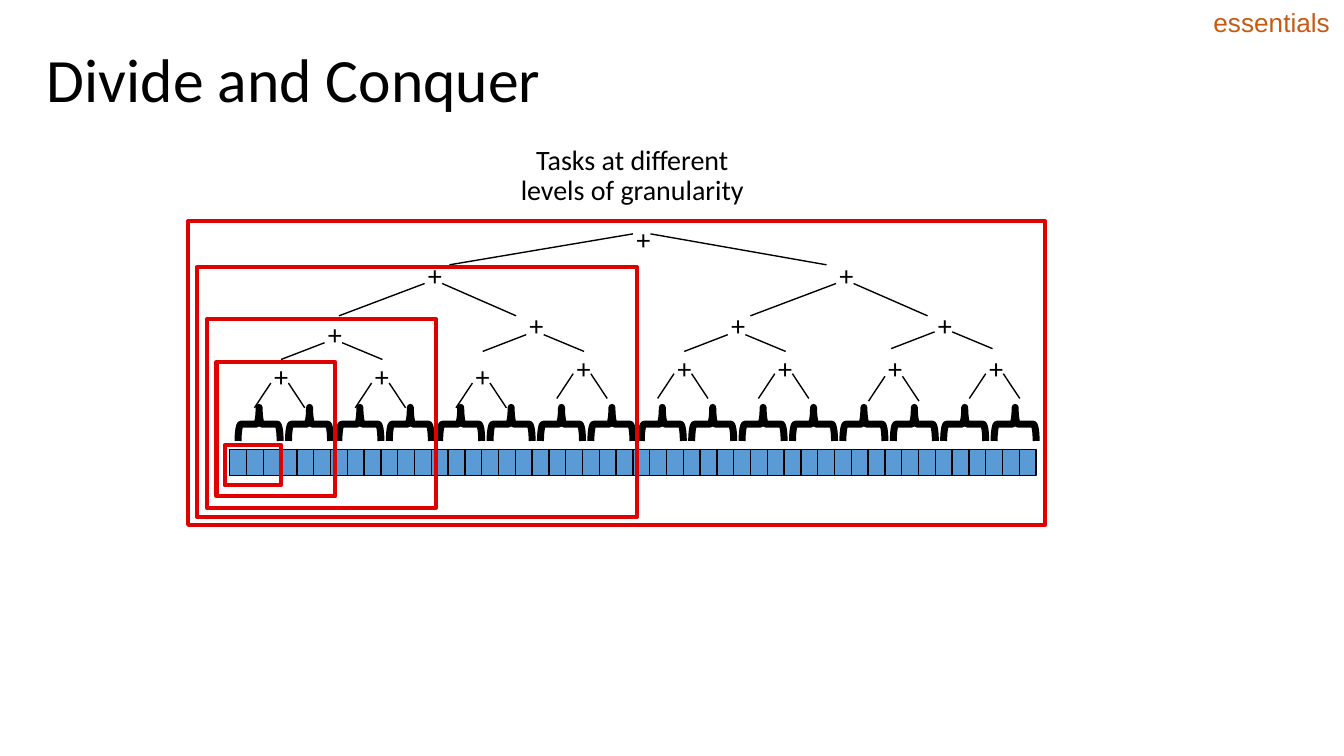
from lxml.etree import SubElement
from pptx import Presentation
from pptx.dml.color import RGBColor
from pptx.enum.shapes import MSO_CONNECTOR, MSO_SHAPE
from pptx.enum.text import MSO_ANCHOR, PP_ALIGN
from pptx.oxml.ns import qn
from pptx.util import Pt


def color(hex_code):
    return RGBColor.from_string(hex_code)


class Diagram:
    black = "000000"
    cell_fill = "5B9BD5"
    frame_red = "DF0000"
    accent = "C65A11"
    font = "Calibri"
    tip_gap = 4.7

    def __init__(self, slide):
        self.shapes = slide.shapes

    def outline(self, kind, box, line, weight, fill=None, rotation=0):
        shape = self.shapes.add_shape(kind, *map(Pt, box))
        shape.shadow.inherit = False
        shape.rotation = rotation
        if fill:
            shape.fill.solid()
            shape.fill.fore_color.rgb = color(fill)
        else:
            shape.fill.background()
        shape.line.color.rgb = color(line)
        shape.line.width = Pt(weight)

    def cell(self, x):
        self.outline(MSO_SHAPE.RECTANGLE, (x, 240.8, 9, 13.8), self.black, 0.75, self.cell_fill)

    def brace(self, x):
        self.outline(MSO_SHAPE.LEFT_BRACE, (x, 216, 18, 22.5), self.black, 3.75, rotation=90)

    def frame(self, box):
        self.outline(MSO_SHAPE.RECTANGLE, box, self.frame_red, 2.25)

    def line(self, start, end):
        connector = self.shapes.add_connector(MSO_CONNECTOR.STRAIGHT, *map(Pt, start + end))
        connector.line.color.rgb = color(self.black)
        connector.line.width = Pt(0.75)
        SubElement(connector._element.spPr, qn("a:effectLst"))

    def text(self, words, box, size, insets, font=None, ink=None, anchor=MSO_ANCHOR.TOP,
             align=PP_ALIGN.LEFT, spacing=None, before=0, wrap=True, rotation=0):
        label = self.shapes.add_textbox(*map(Pt, box))
        label.rotation = rotation
        frame = label.text_frame
        frame.word_wrap = wrap
        frame.vertical_anchor = anchor
        frame.margin_left = frame.margin_right = Pt(insets[0])
        frame.margin_top = frame.margin_bottom = Pt(insets[1])
        paragraph = frame.paragraphs[0]
        paragraph.text = words
        paragraph.alignment = align
        paragraph.line_spacing = spacing
        paragraph.space_before = Pt(before)
        paragraph.font.size = Pt(size)
        paragraph.font.name = font or self.font
        paragraph.font.color.rgb = color(ink or self.black)

    def node(self, x, top, fork, left, right, drop):
        self.line((x + right, fork + drop), (x + self.tip_gap, fork))
        self.line((x - left, fork + drop), (x - self.tip_gap, fork))
        self.text("+", (x - 9.5, top, 19, 24), 15, (5, 2.7), rotation=180)


LEVELS = [
    ((13.5, 13.5, 13.3), [
        (149.8, 191.5, 205.2), (203.8, 191.5, 205.2), (257.8, 191.5, 205.2),
        (311.8, 187.2, 200.2), (365.8, 187.2, 200.2), (419.8, 187.2, 200.2),
        (478.8, 187.2, 201.6), (532.8, 187.2, 200.2)]),
    ((28, 26.3, 9), [
        (178.6, 169.2, 183.6), (286.6, 164.2, 179.3),
        (394.6, 164.2, 179.3), (505.4, 164.2, 177.8)]),
    ((50.6, 44.3, 17.3), [(232.2, 137.5, 151.9), (452.6, 137.5, 151.9)]),
    ((103, 99, 16.6), [(343.8, 118.1, 125.3)]),
]

TASK_FRAMES = [
    (120.4, 238.4, 30.2, 21.6),
    (116, 194.1, 63.6, 71.9),
    (110.8, 171, 122.8, 101),
    (105.6, 143, 235.6, 134),
    (100.8, 118.4, 459.2, 162.8),
]


def main():
    deck = Presentation()
    deck.slide_width, deck.slide_height = Pt(720), Pt(405)
    diagram = Diagram(deck.slides.add_slide(deck.slide_layouts[6]))

    for index in range(48):
        diagram.cell(123.1 + 9 * index)
    for index in range(16):
        diagram.brace(129.8 + 27 * index)
    for branches, nodes in LEVELS:
        for node in nodes:
            diagram.node(*node, *branches)
    for box in TASK_FRAMES:
        diagram.frame(box)

    diagram.text("Tasks at different levels of granularity", (270, 74.9, 137.5, 39.6), 15,
                 (7.2, 7.2), anchor=MSO_ANCHOR.MIDDLE, align=PP_ALIGN.CENTER,
                 spacing=0.9, before=4)
    diagram.text("Divide and Conquer", (20.2, 10.8, 679.7, 67), 33, (5, 5),
                 anchor=MSO_ANCHOR.MIDDLE, spacing=0.9)
    diagram.text("essentials", (643, 0, 77, 24.5), 14, (7.2, 3.6), font="Arial",
                 ink=diagram.accent, wrap=False)

    deck.save("out.pptx")


if __name__ == "__main__":
    main()
